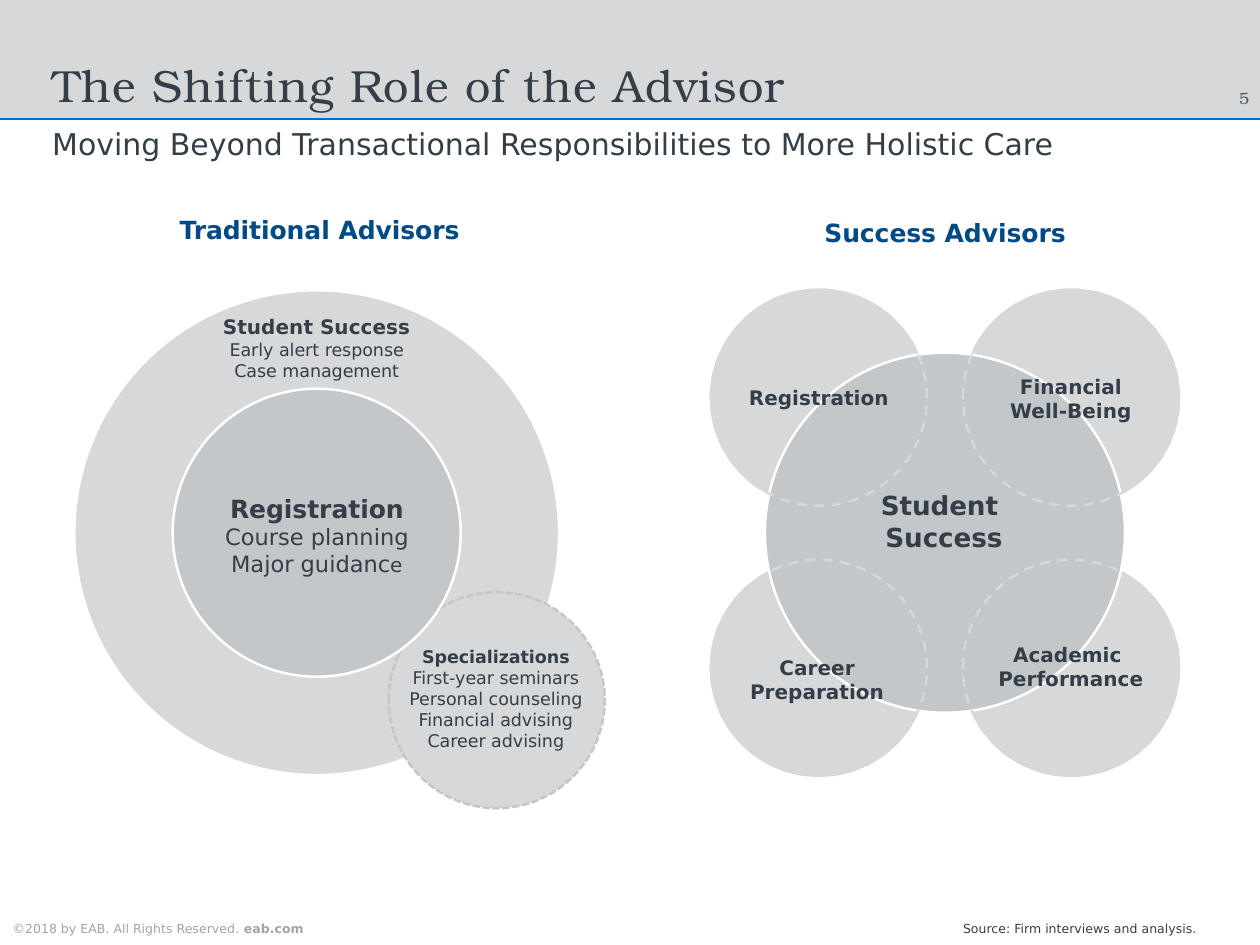
"""Build a slide comparing traditional advisors with success advisors."""
from lxml import etree
from pptx import Presentation
from pptx.dml.color import RGBColor
from pptx.enum.dml import MSO_LINE
from pptx.enum.shapes import MSO_CONNECTOR, MSO_SHAPE
from pptx.enum.text import MSO_ANCHOR, PP_ALIGN
from pptx.oxml.ns import qn
from pptx.util import Inches, Pt

OVAL, RECT = MSO_SHAPE.OVAL, MSO_SHAPE.RECTANGLE
DASH, DOTS = MSO_LINE.DASH, MSO_LINE.SQUARE_DOT
TOP, LOW = MSO_ANCHOR.TOP, MSO_ANCHOR.BOTTOM
LEFT, MID, RIGHT = PP_ALIGN.LEFT, PP_ALIGN.CENTER, PP_ALIGN.RIGHT
SANS, SERIF = "DejaVu Sans", "TeX Gyre Bonum"
INK, NAVY, BLUE, WHITE = "333E48", "004A88", "0070CD", "FFFFFF"
PALE, GREY, FADED, SLATE = "D6D8DA", "C4C7CA", "A0A4A9", "4F5861"

TITLE = "The Shifting Role of the Advisor"
LEAD = "Moving Beyond Transactional Responsibilities to More Holistic Care"
SOURCE = "Source: Firm interviews and analysis."
RIGHTS = [[("©2018 by EAB. All Rights Reserved. ", 5, False), ("eab.com", 5, True)]]
HEADS = [("Traditional Advisors", (0.41, 1.19, 2.73, 0.17)),
         ("Success Advisors", (4.05, 1.21, 2.4, 0.17))]
OUTER = [[("Student Success", 8, True)],
         [("Early alert response", 7, False)],
         [("Case management", 7, False)]]
INNER = [[("Registration", 10, True)],
         [("Course planning", 9, False)],
         [("Major guidanc", 9, False), ("e", 8, False)]]
EXTRA = [[("Specializations", 7, True)]] + [
    [(name, 7, False)] for name in
    ("First-year seminars", "Personal counseling", "Financial advising", "Career advising")]
CORE = "Student \nSuccess"
AREAS = [("Registration", (4.05, 2.14, 1, 0.13)),
         ("Financial\nWell-Being", (5.45, 2.08, 1, 0.27)),
         ("Career Preparation", (4.04, 3.64, 1, 0.27)),
         ("Academic \nPerformance", (5.45, 3.57, 1, 0.27))]
SPOTS = [(x, y, 1.2, 1.2) for y in (1.61, 3.11) for x in (3.95, 5.35)]

deck = Presentation()
deck.slide_width, deck.slide_height = Inches(7), Inches(5.25)
slide = deck.slides.add_slide(deck.slide_layouts[6])


def rgb(code):
    """Turn a hex string into a colour."""
    return RGBColor.from_string(code)


def apply(thing, values):
    """Set each named value on an object."""
    for key, value in values.items():
        setattr(thing, key, value)


def shape(kind, box, fill=None, line=None, width=1, dash=None):
    """Draw a preset shape, filled or outlined or both."""
    form = slide.shapes.add_shape(kind, *map(Inches, box))
    form.shadow.inherit = False
    if fill:
        form.fill.solid()
        form.fill.fore_color.rgb = rgb(fill)
    else:
        form.fill.background()
    if line:
        form.line.color.rgb = rgb(line)
        apply(form.line, {"width": Pt(width), "dash_style": dash})
    else:
        form.line.fill.background()


def write(box, paras, color=INK, font=SANS, align=LEFT, anchor=TOP,
          pads=(0, 0, 0), lead=None, track=None):
    """Place paragraphs of (text, size, bold) runs in a text box."""
    frame = slide.shapes.add_textbox(*map(Inches, box)).text_frame
    left, right, base = map(Inches, pads)
    apply(frame, {"word_wrap": True, "vertical_anchor": anchor, "margin_top": 0,
                  "margin_left": left, "margin_right": right, "margin_bottom": base})
    for i, runs in enumerate(paras):
        para = frame.add_paragraph() if i else frame.paragraphs[0]
        apply(para, {"alignment": align, "line_spacing": lead})
        for text, size, bold in runs:
            for j, line in enumerate(text.split("\n")):
                if j:
                    para.add_line_break()
                run = para.add_run()
                run.text = line
                apply(run.font, {"name": font, "size": Pt(size), "bold": bold})
                run.font.color.rgb = rgb(color)
                if track:
                    run._r.get_or_add_rPr().set("spc", str(track))


def label(box, text, size, bold=False, **style):
    """Place a text of one run."""
    write(box, [[(text, size, bold)]], **style)


def rule(start, end, color, width):
    """Draw a straight line without shadow."""
    line = slide.shapes.add_connector(MSO_CONNECTOR.STRAIGHT, *map(Inches, start + end))
    line.line.color.rgb = rgb(color)
    line.line.width = Pt(width)
    etree.SubElement(line._element.spPr, qn("a:effectLst"))


shape(RECT, (0, 0, 7, 0.66), PALE)
rule((0, 0.66), (7, 0.66), BLUE, 0.75)
label((6.74, 0.49, 0.2, 0.11), "5", 6.5, color=SLATE, font=SERIF, align=RIGHT)
label((0.29, 0.34, 5.98, 0.28), TITLE, 18, font=SERIF, anchor=LOW, lead=Pt(20), track=50)
label((0.29, 0.7, 6.42, 0.2), LEAD, 12)
write((0, 5.12, 2.27, 0.13), RIGHTS, FADED, anchor=LOW, pads=(0.07, 0.07, 0.05))
label((5.35, 5.12, 1.65, 0.13), SOURCE, 5, anchor=LOW, pads=(0, 0.07, 0.05))
for text, box in HEADS:
    label(box, text, 10, True, color=NAVY, align=MID)

shape(OVAL, (0.41, 1.61, 2.7, 2.7), PALE, WHITE, 1.5)
write((1.16, 1.75, 1.2, 0.34), OUTER, align=MID)
shape(OVAL, (2.16, 3.29, 1.2, 1.2), PALE, GREY, 1, DOTS)
write((2.09, 3.59, 1.33, 0.59), EXTRA, align=MID)
shape(OVAL, (0.96, 2.16, 1.6, 1.6), GREY, WHITE)
write((1.25, 2.74, 1.02, 0.44), INNER, align=MID)

for spot in SPOTS:
    shape(OVAL, spot, PALE, PALE)
shape(OVAL, (4.25, 1.96, 2, 2), GREY, WHITE)
label((4.41, 2.72, 1.67, 0.47), CORE, 10.5, True, align=MID)
for spot in SPOTS:
    shape(OVAL, spot, line=PALE, dash=DASH)
for text, box in AREAS:
    label(box, text, 8, True, align=MID)

deck.save("out.pptx")
